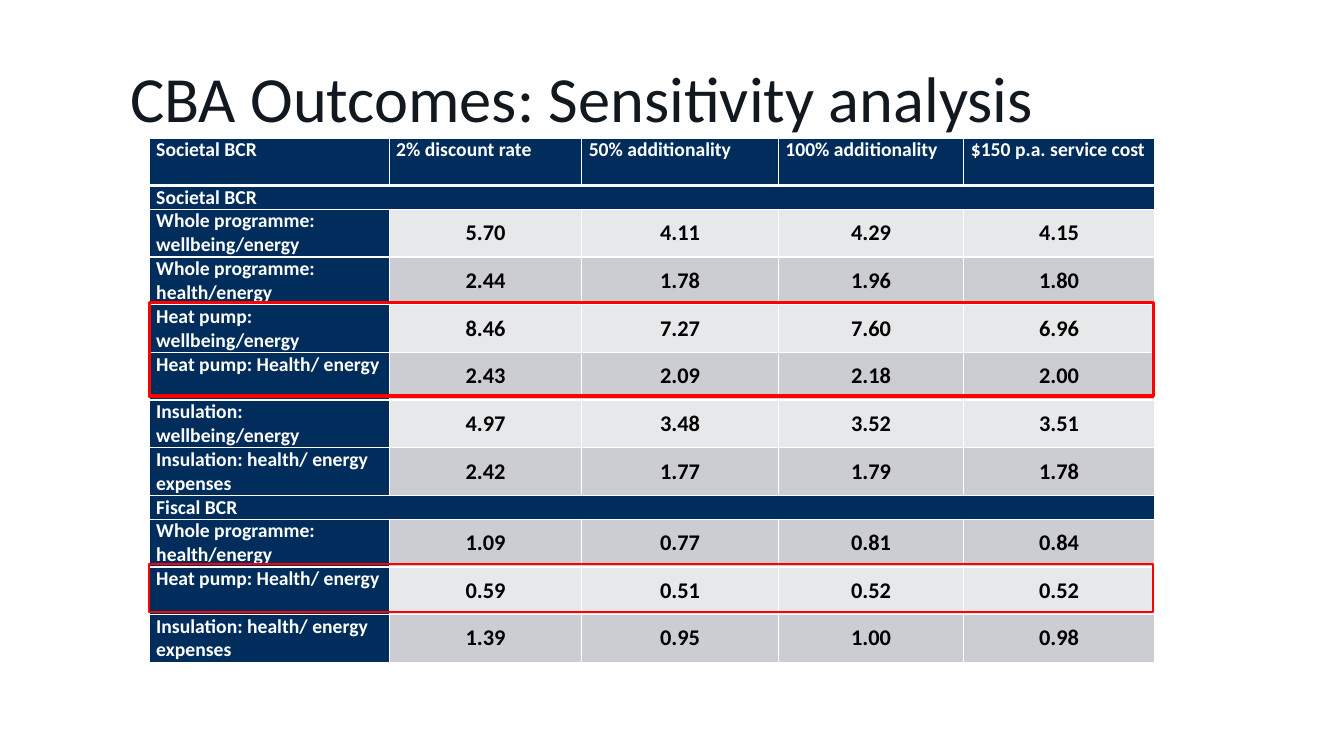
import pptx
import pptx.dml.color
import pptx.enum.shapes
import pptx.enum.text
import pptx.oxml
import pptx.oxml.ns
import pptx.util

PX = 9144
NAVY, LIGHT, DARK, WHITE, BLACK, RED = "002D5C", "E7E8EA", "CCCDD2", "FFFFFF", "000000", "FF0000"
ANCHOR = pptx.enum.text.MSO_ANCHOR
ALIGN = pptx.enum.text.PP_ALIGN


def color(hex_value):
    return pptx.dml.color.RGBColor.from_string(hex_value)


def write(text_frame, text, size, text_color, bold, align):
    paragraph = text_frame.paragraphs[0]
    paragraph.alignment = align
    run = paragraph.add_run()
    run.text = text
    formats = {"name": "Calibri", "size": pptx.util.Pt(size), "bold": bold}
    for name, value in formats.items():
        setattr(run.font, name, value)
    run.font.color.rgb = color(text_color)


presentation = pptx.Presentation()
presentation.slide_width = 1333 * PX
presentation.slide_height = 750 * PX
slide = presentation.slides.add_slide(presentation.slide_layouts[5])

title = slide.shapes.title
title_box = {"left": 129, "top": 28, "width": 1150, "height": 145}
for name, value in title_box.items():
    setattr(title, name, value * PX)
title_format = {
    "margin_left": 0, "margin_top": 0, "margin_right": 0, "margin_bottom": 0,
    "word_wrap": True, "vertical_anchor": ANCHOR.MIDDLE,
    "auto_size": pptx.enum.text.MSO_AUTO_SIZE.NONE,
}
for name, value in title_format.items():
    setattr(title.text_frame, name, value)
write(title.text_frame, "CBA Outcomes: Sensitivity analysis", 46, "111820", False, ALIGN.LEFT)
title.text_frame.paragraphs[0].line_spacing = 0.9

rows = [
    ["Societal BCR", "2% discount rate", "50% additionality", "100% additionality", "$150 p.a. service cost"],
    ["Societal BCR"],
    ["Whole programme: wellbeing/energy", "5.70", "4.11", "4.29", "4.15"],
    ["Whole programme: health/energy", "2.44", "1.78", "1.96", "1.80"],
    ["Heat pump: wellbeing/energy", "8.46", "7.27", "7.60", "6.96"],
    ["Heat pump: Health/ energy", "2.43", "2.09", "2.18", "2.00"],
    ["Insulation: wellbeing/energy", "4.97", "3.48", "3.52", "3.51"],
    ["Insulation: health/ energy expenses", "2.42", "1.77", "1.79", "1.78"],
    ["Fiscal BCR"],
    ["Whole programme: health/energy", "1.09", "0.77", "0.81", "0.84"],
    ["Heat pump: Health/ energy", "0.59", "0.51", "0.52", "0.52"],
    ["Insulation: health/ energy expenses", "1.39", "0.95", "1.00", "0.98"],
]
column_widths = [238, 191, 195, 184, 189]
table = slide.shapes.add_table(len(rows), 5, 148 * PX, 137 * PX, 996 * PX, 517 * PX).table
for column, width in zip(table.columns, column_widths):
    column.width = width * PX

for row_index, values in enumerate(rows):
    is_section = len(values) == 1
    table.rows[row_index].height = (23 if is_section else 47) * PX
    if is_section:
        table.cell(row_index, 0).merge(table.cell(row_index, 4))
    for column_index in range(5):
        cell = table.cell(row_index, column_index)
        is_value = row_index > 0 and column_index > 0 and not is_section
        cell_format = {
            "margin_left": 7 * PX, "margin_right": 7 * PX, "margin_top": 0, "margin_bottom": 0,
            "vertical_anchor": ANCHOR.MIDDLE if is_value or row_index == 1 else ANCHOR.TOP,
        }
        for name, value in cell_format.items():
            setattr(cell, name, value)
        cell.fill.solid()
        band = DARK if row_index % 2 else LIGHT
        cell.fill.fore_color.rgb = color(band if is_value else NAVY)
        if column_index < len(values):
            size, text_color, align = (16, BLACK, ALIGN.CENTER) if is_value else (14, WHITE, ALIGN.LEFT)
            write(cell.text_frame, values[column_index], size, text_color, True, align)
        properties = cell._tc.get_or_add_tcPr()
        for position, side in enumerate("LRTB"):
            thick = (row_index, side) in [(0, "B"), (1, "T")]
            border = pptx.oxml.parse_xml(
                f'<a:ln{side} {pptx.oxml.ns.nsdecls("a")} w="{38100 if thick else 12700}">'
                f'<a:solidFill><a:srgbClr val="{WHITE}"/></a:solidFill></a:ln{side}>'
            )
            properties.insert(position, border)

for top, height, line_width in [(300, 93, 2.25), (560, 47, 1.5)]:
    highlight = slide.shapes.add_shape(
        pptx.enum.shapes.MSO_SHAPE.RECTANGLE, 148 * PX, top * PX, 996 * PX, height * PX
    )
    highlight.shadow.inherit = False
    highlight.fill.background()
    highlight.line.color.rgb = color(RED)
    highlight.line.width = pptx.util.Pt(line_width)

presentation.save("out.pptx")
